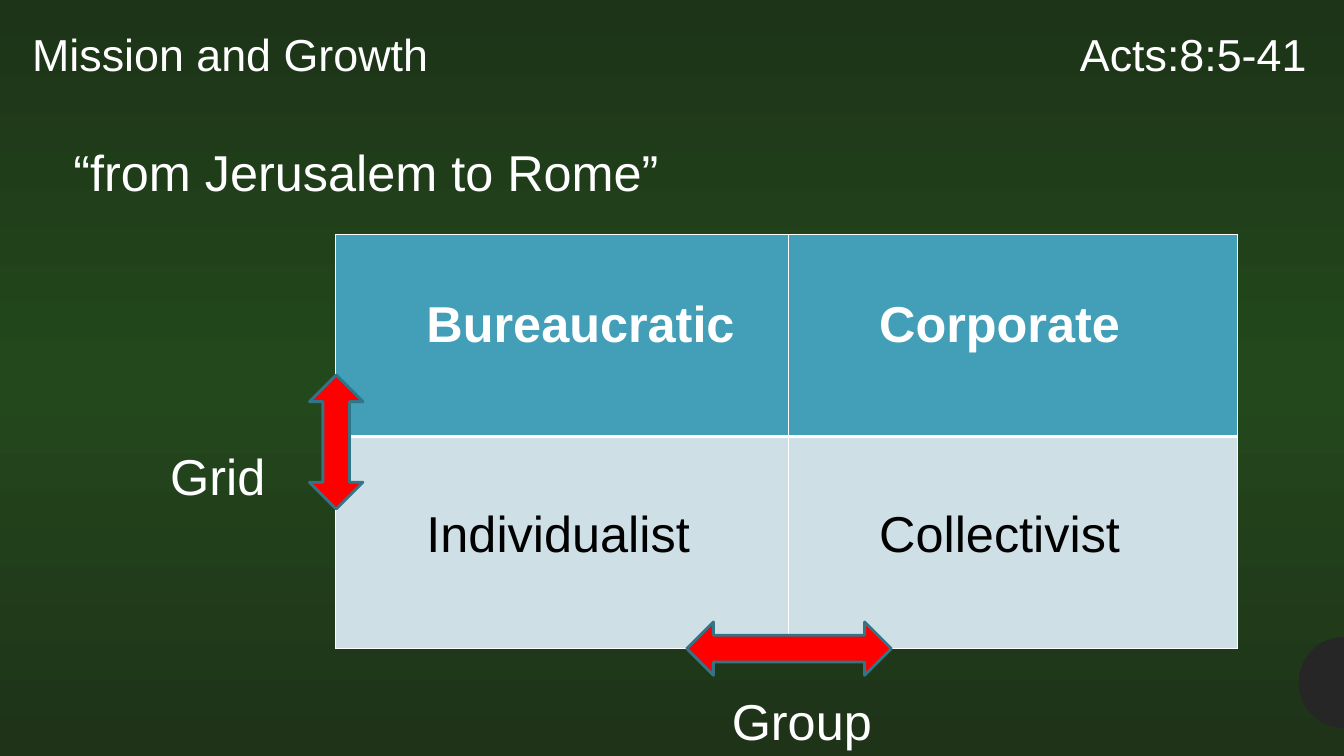
from copy import deepcopy
from math import cos, pi, sin

from pptx import Presentation
from pptx.dml.color import RGBColor
from pptx.enum.shapes import MSO_SHAPE
from pptx.enum.text import PP_ALIGN
from pptx.oxml import parse_xml
from pptx.oxml.ns import nsdecls
from pptx.util import Inches, Pt

COLORS = {
    "edge_green": "1F3319",
    "middle_green": "23481C",
    "end_green": "1D3418",
    "white": "FFFFFF",
    "black": "000000",
    "header": "439EB7",
    "body": "CFDFE6",
    "arrow": "FF0000",
    "arrow_line": "327587",
    "circle": "262626",
}


def color(name):
    return RGBColor.from_string(COLORS[name])


def write_text(paragraph, text, size=36, ink="white", bold=False,
               align=PP_ALIGN.LEFT, before=0, indent=0):
    paragraph.alignment = align
    paragraph.space_before = Pt(before)
    if indent:
        paragraph._p.get_or_add_pPr().set("marL", str(Inches(indent)))
    run = paragraph.add_run()
    run.text = text
    run.font.name = "Arial"
    run.font.size = Pt(size)
    run.font.bold = bold
    run.font.color.rgb = color(ink)


class SlideBuilder:
    def __init__(self, slide):
        self.slide = slide

    def background(self, *stops):
        fill = self.slide.background.fill
        fill.gradient()
        fill.gradient_angle = 90
        stop_list = fill.gradient_stops[0]._gs.getparent()
        stop_list.append(deepcopy(stop_list[-1]))
        for index, (stop, name) in enumerate(zip(fill.gradient_stops, stops)):
            stop.position = index / 2
            stop.color.rgb = color(name)

    def half_circle(self, x, y, radius, steps=40):
        angles = [pi / 2 + pi * step / steps for step in range(steps + 1)]
        points = [(Inches(x + radius * cos(angle)), Inches(y + radius * sin(angle)))
                  for angle in angles]
        outline = self.slide.shapes.build_freeform(*points[0])
        outline.add_line_segments(points[1:], close=True)
        shape = outline.convert_to_shape()
        self.paint(shape, "circle")

    def paint(self, shape, fill, line=None):
        shape.shadow.inherit = False
        shape.fill.solid()
        shape.fill.fore_color.rgb = color(fill)
        if line:
            shape.line.color.rgb = color(line)
            shape.line.width = Pt(2)
        else:
            shape.line.fill.background()

    def text_box(self, left, top, width, height, *entries):
        box = self.slide.shapes.add_textbox(*map(Inches, (left, top, width, height)))
        frame = box.text_frame
        frame.word_wrap = True
        for index, (text, style) in enumerate(entries):
            paragraph = frame.add_paragraph() if index else frame.paragraphs[0]
            write_text(paragraph, text, **style)

    def arrow(self, left, top, width, height, rotation=0):
        shape = self.slide.shapes.add_shape(
            MSO_SHAPE.UP_DOWN_ARROW, *map(Inches, (left, top, width, height)))
        shape.rotation = rotation
        self.paint(shape, "arrow", "arrow_line")

    def table(self, left, top, widths, rows):
        height = sum(row["height"] for row in rows)
        table = self.slide.shapes.add_table(
            len(rows), len(widths), Inches(left), Inches(top),
            Inches(sum(widths)), Inches(height)).table
        for column, width in zip(table.columns, widths):
            column.width = Inches(width)
        for index, row in enumerate(rows):
            table.rows[index].height = Inches(row["height"])
            for cell, text in zip(table.rows[index].cells, row["texts"]):
                cell.margin_left = Inches(0.9)
                cell.margin_top = Inches(row["inset"])
                write_text(cell.text_frame.paragraphs[0], text, **row["style"])
                self.borders(cell, row["top"], row["bottom"])
                cell.fill.solid()
                cell.fill.fore_color.rgb = color(row["fill"])

    def borders(self, cell, top, bottom):
        properties = cell._tc.get_or_add_tcPr()
        for side, width in (("L", 1), ("R", 1), ("T", top), ("B", bottom)):
            properties.append(parse_xml(
                f'<a:ln{side} {nsdecls("a")} w="{Pt(width)}"><a:solidFill>'
                f'<a:srgbClr val="{COLORS["white"]}"/></a:solidFill></a:ln{side}>'))


def main():
    presentation = Presentation()
    presentation.slide_width = Inches(13.33)
    presentation.slide_height = Inches(7.5)
    builder = SlideBuilder(presentation.slides.add_slide(presentation.slide_layouts[6]))

    builder.background("edge_green", "middle_green", "end_green")
    builder.half_circle(13.33, 6.77, 0.45)
    builder.text_box(0.22, 0.22, 4.75, 0.64, ("Mission and Growth", {"size": 32}))
    builder.text_box(4.97, 0.22, 8.09, 0.64,
                     ("Acts:8:5-41", {"size": 32, "align": PP_ALIGN.RIGHT}))
    builder.text_box(0.63, 1.35, 12.3, 6.12,
                     ("“from Jerusalem to Rome”", {}),
                     ("Grid", {"before": 174, "indent": 0.96}),
                     ("Group", {"before": 132, "indent": 6.53}))
    builder.table(3.33, 2.33, (4.49, 4.45), (
        {"texts": ("Bureaucratic", "Corporate"), "height": 2, "inset": 0.62,
         "fill": "header", "style": {"bold": True}, "top": 1, "bottom": 3},
        {"texts": ("Individualist", "Collectivist"), "height": 2.1, "inset": 0.7,
         "fill": "body", "style": {"ink": "black"}, "top": 3, "bottom": 1},
    ))
    builder.arrow(3.07, 3.72, 0.53, 1.33)
    builder.arrow(7.56, 5.42, 0.53, 2.03, rotation=90)

    presentation.save("out.pptx")


if __name__ == "__main__":
    main()
